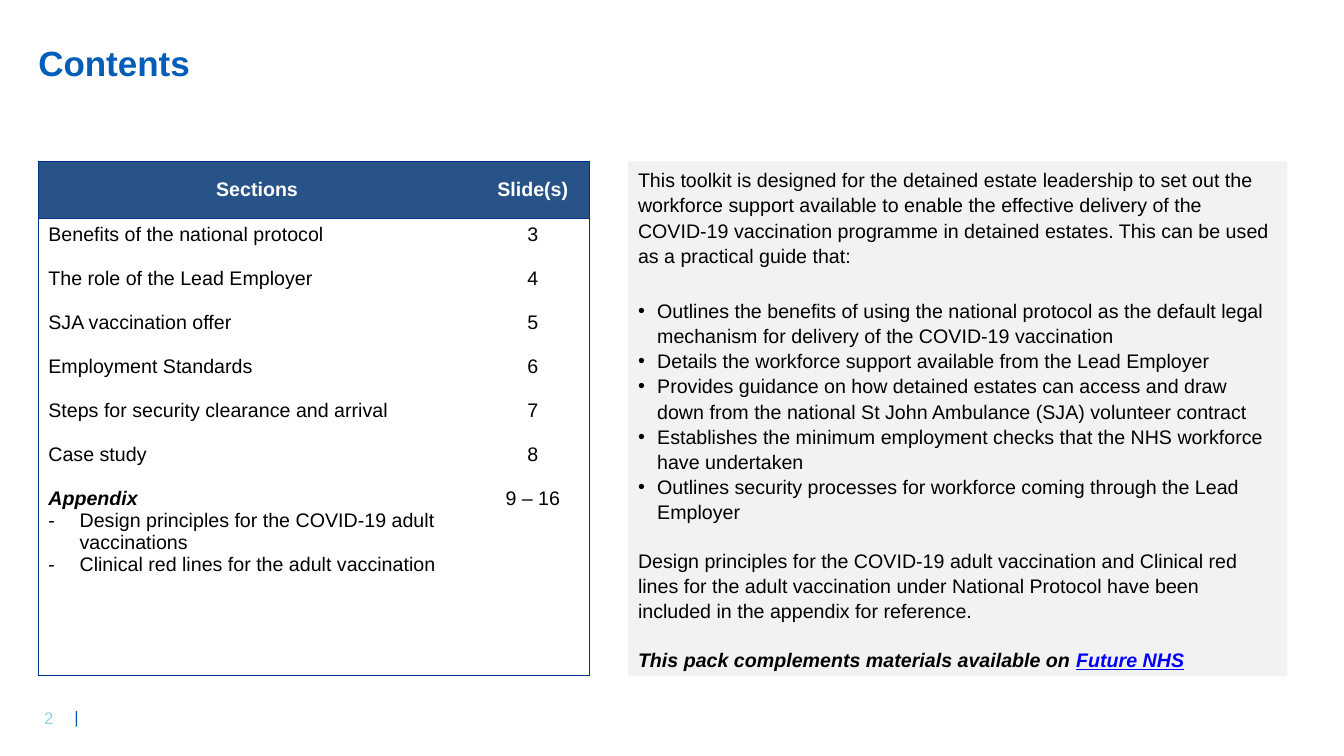
from dataclasses import dataclass

from lxml.etree import SubElement
from pptx import Presentation
from pptx.dml.color import RGBColor
from pptx.enum.shapes import MSO_SHAPE as Shape
from pptx.enum.text import MSO_ANCHOR as Anchor, PP_ALIGN as Align
from pptx.oxml.ns import qn
from pptx.util import Inches, Pt

BLUE = RGBColor(0x00, 0x5E, 0xB8)
PALE_BLUE = RGBColor(0x8D, 0xD3, 0xF0)
HEADER_BLUE = RGBColor(0x28, 0x53, 0x88)
BORDER_BLUE = RGBColor(0x00, 0x30, 0x87)
LINK_BLUE = RGBColor(0x00, 0x00, 0xFF)
GREY = RGBColor(0xF2, 0xF2, 0xF2)
WHITE = RGBColor(0xFF, 0xFF, 0xFF)
BLACK = RGBColor(0x00, 0x00, 0x00)

BODY_SIZE = 14
TABLE_GAP = 15.64
PANEL_GAP = 16.75
PANEL_LINE_SPACING = 1.07


@dataclass
class Line:
    """One paragraph of body text."""
    text: str
    gap: float = 0
    bullet: str = ""
    indent: float = 0
    emphasis: bool = False
    color: RGBColor = BLACK
    bold: bool = False
    align: Align = Align.LEFT
    spacing: float = 1.0


@dataclass
class Label:
    """A single-line text box."""
    text: str
    left: float
    top: float
    width: float
    height: float
    size: float
    color: RGBColor
    bold: bool = False
    inset: float = 0.1


SECTIONS = [
    ("Benefits of the national protocol", "3"),
    ("The role of the Lead Employer", "4"),
    ("SJA vaccination offer", "5"),
    ("Employment Standards", "6"),
    ("Steps for security clearance and arrival", "7"),
    ("Case study", "8"),
    ("Appendix", "9 – 16"),
]
APPENDIX = [
    "Design principles for the COVID-19 adult vaccinations",
    "Clinical red lines for the adult vaccination",
]
INTRO = (
    "This toolkit is designed for the detained estate leadership to set out the "
    "workforce support available to enable the effective delivery of the COVID-19 "
    "vaccination programme in detained estates. This can be used as a practical "
    "guide that:"
)
AIMS = [
    "Outlines the benefits of using the national protocol as the default legal "
    "mechanism for delivery of the COVID-19 vaccination",
    "Details the workforce support available from the Lead Employer",
    "Provides guidance on how detained estates can access and draw down from the "
    "national St John Ambulance (SJA) volunteer contract",
    "Establishes the minimum employment checks that the NHS workforce have undertaken",
    "Outlines security processes for workforce coming through the Lead Employer",
]
REFERENCE = (
    "Design principles for the COVID-19 adult vaccination and Clinical red lines for "
    "the adult vaccination under National Protocol have been included in the appendix "
    "for reference."
)
LABELS = [
    Label("Contents", 0.38, 0.29, 9.58, 0.67, 25, BLUE, bold=True, inset=0),
    Label("2", 0.34, 6.97, 0.42, 0.3, 12, PALE_BLUE),
    Label("|", 0.64, 6.96, 0.32, 0.3, 12, BLUE),
]


def style_font(font, size: float, color: RGBColor, bold=False, italic=False) -> None:
    font.name = "Arial"
    font.size = Pt(size)
    font.bold = bold
    font.italic = italic
    font.color.rgb = color


def add_bullet(paragraph, character: str, indent: float) -> None:
    properties = paragraph._p.get_or_add_pPr()
    properties.set("marL", str(Inches(indent)))
    properties.set("indent", str(-Inches(indent)))
    SubElement(properties, qn("a:buFont"), typeface="Arial")
    SubElement(properties, qn("a:buChar"), char=character)


def write_lines(text_frame, lines: list[Line]) -> None:
    text_frame.text = "\n".join(line.text for line in lines)
    for paragraph, line in zip(text_frame.paragraphs, lines):
        if line.bullet:
            add_bullet(paragraph, line.bullet, line.indent)
        paragraph.alignment = line.align
        paragraph.line_spacing = line.spacing
        if line.gap:
            paragraph.space_before = Pt(line.gap)
        for run in paragraph.runs:
            style_font(run.font, BODY_SIZE, line.color,
                       line.bold or line.emphasis, line.emphasis)


def add_label(slide, label: Label) -> None:
    box = slide.shapes.add_textbox(Inches(label.left), Inches(label.top),
                                   Inches(label.width), Inches(label.height))
    frame = box.text_frame
    frame.word_wrap = True
    frame.vertical_anchor = Anchor.MIDDLE if label.inset == 0 else Anchor.TOP
    if label.inset == 0:
        frame.margin_left = frame.margin_right = 0
        frame.margin_top = frame.margin_bottom = 0
    frame.text = label.text
    style_font(frame.paragraphs[0].runs[0].font, label.size, label.color, label.bold)


def set_borders(cell, edges: str) -> None:
    """Draw the named edges (of L, R, T, B) and clear the others."""
    properties = cell._tc.get_or_add_tcPr()
    for position, edge in enumerate("LRTB"):
        line = SubElement(properties, qn(f"a:ln{edge}"), w=str(Pt(0.75)))
        if edge in edges:
            fill = SubElement(line, qn("a:solidFill"))
            SubElement(fill, qn("a:srgbClr"), val=str(BORDER_BLUE))
        else:
            SubElement(line, qn("a:noFill"))
        properties.insert(position, line)


def add_contents_table(slide) -> None:
    table = slide.shapes.add_table(2, 2, Inches(0.38), Inches(1.6),
                                   Inches(5.47), Inches(5.1)).table
    table.first_row = table.horz_banding = False
    for column, width in zip(table.columns, (4.34, 1.13)):
        column.width = Inches(width)
    for row, height in zip(table.rows, (0.57, 4.53)):
        row.height = Inches(height)

    # Header row
    for column, (heading, edges) in enumerate((("Sections", "LTB"), ("Slide(s)", "RTB"))):
        cell = table.cell(0, column)
        cell.fill.solid()
        cell.fill.fore_color.rgb = HEADER_BLUE
        cell.vertical_anchor = Anchor.MIDDLE
        write_lines(cell.text_frame,
                    [Line(heading, color=WHITE, bold=True, align=Align.CENTER)])
        set_borders(cell, edges)

    # Section names and slide numbers
    names, numbers = [], []
    for index, (name, number) in enumerate(SECTIONS):
        gap = TABLE_GAP if index else 0
        names.append(Line(name, gap, emphasis=name == "Appendix"))
        numbers.append(Line(number, gap, align=Align.CENTER))
    names += [Line(text, bullet="-", indent=0.31) for text in APPENDIX]
    for column, (lines, edges) in enumerate(((names, "LTB"), (numbers, "RTB"))):
        cell = table.cell(1, column)
        cell.fill.background()
        write_lines(cell.text_frame, lines)
        set_borders(cell, edges)


def add_summary_panel(slide) -> None:
    panel = slide.shapes.add_shape(Shape.RECTANGLE, Inches(6.23), Inches(1.6),
                                   Inches(6.54), Inches(5.11))
    panel.shadow.inherit = False
    panel.fill.solid()
    panel.fill.fore_color.rgb = GREY
    panel.line.fill.background()
    frame = panel.text_frame
    frame.word_wrap = True
    frame.vertical_anchor = Anchor.MIDDLE

    lines = [Line(INTRO)]
    lines += [Line(aim, bullet="•", indent=0.19) for aim in AIMS]
    lines[1].gap = 21.5
    lines += [Line(REFERENCE, PANEL_GAP),
              Line("This pack complements materials available on ", PANEL_GAP, emphasis=True)]
    for line in lines:
        line.spacing = PANEL_LINE_SPACING
    write_lines(frame, lines)

    source = frame.paragraphs[-1].add_run()
    source.text = "Future NHS"
    style_font(source.font, BODY_SIZE, LINK_BLUE, bold=True, italic=True)
    source.font.underline = True


def main() -> None:
    presentation = Presentation()
    presentation.slide_width = Inches(13.33)
    presentation.slide_height = Inches(7.5)
    slide = presentation.slides.add_slide(presentation.slide_layouts[6])
    add_contents_table(slide)
    add_summary_panel(slide)
    for label in LABELS:
        add_label(slide, label)
    presentation.save("out.pptx")


if __name__ == "__main__":
    main()
